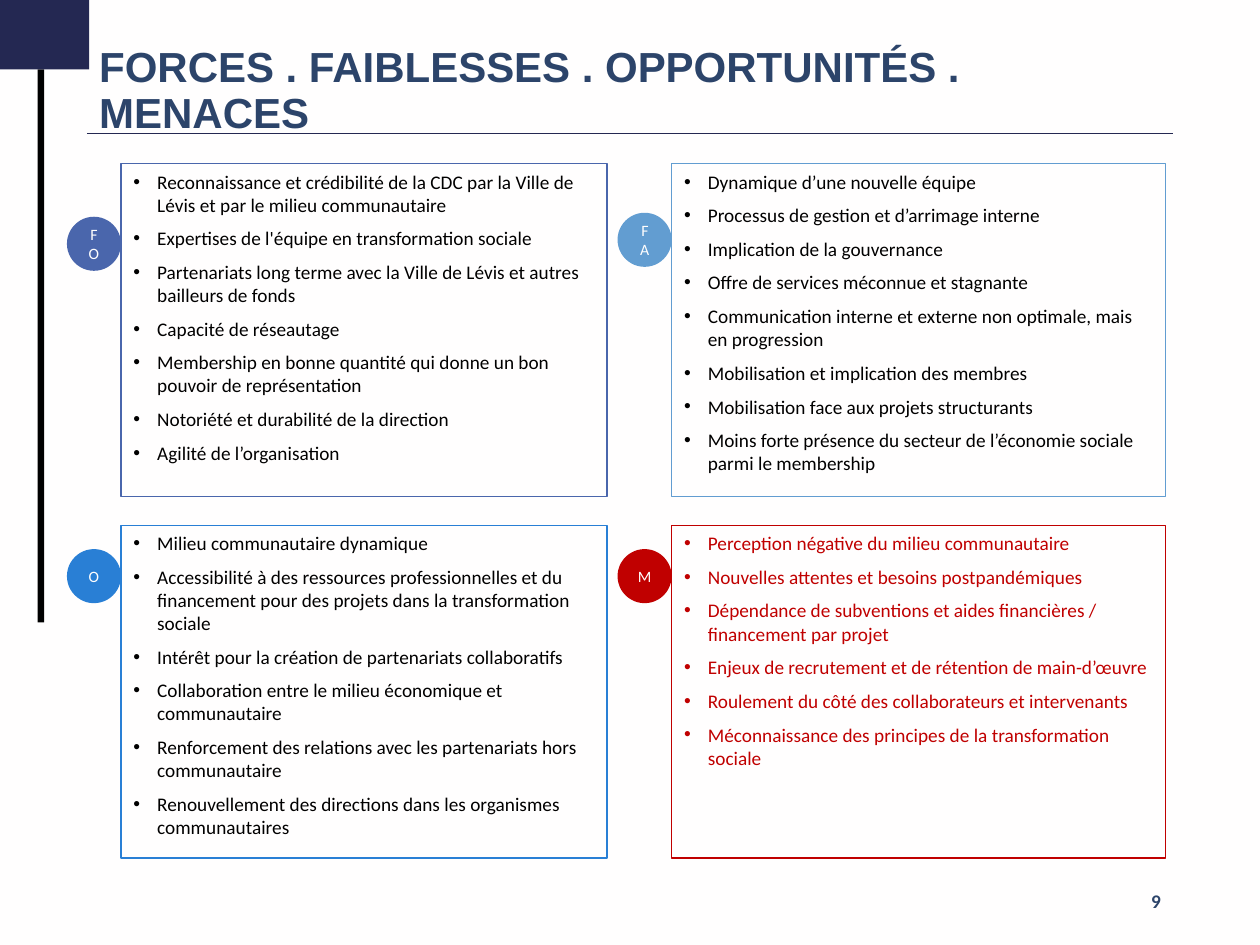
from dataclasses import dataclass

import lxml.etree
import pptx
import pptx.dml.color
import pptx.enum.shapes
import pptx.enum.text
import pptx.oxml.ns
import pptx.shapes.autoshape
import pptx.slide
import pptx.text.text
import pptx.util

Cm = pptx.util.Cm
Pt = pptx.util.Pt
RGBColor = pptx.dml.color.RGBColor
Shape = pptx.shapes.autoshape.Shape
Slide = pptx.slide.Slide
MSO_SHAPE = pptx.enum.shapes.MSO_SHAPE
MSO_ANCHOR = pptx.enum.text.MSO_ANCHOR
PP_ALIGN = pptx.enum.text.PP_ALIGN

WHITE = RGBColor(0xFF, 0xFE, 0xFE)
BLACK = RGBColor(0x00, 0x00, 0x00)
NAVY = RGBColor(0x24, 0x28, 0x52)
SLATE = RGBColor(0x2C, 0x44, 0x6A)
INDIGO = RGBColor(0x4A, 0x66, 0xAC)
SKY = RGBColor(0x62, 0x9D, 0xD1)
BLUE = RGBColor(0x29, 0x7F, 0xD5)
RED = RGBColor(0xC0, 0x00, 0x00)

LEFT_COLUMN, LEFT_WIDTH = Cm(2.44), Cm(9.8)
RIGHT_COLUMN, RIGHT_WIDTH = Cm(13.54), Cm(9.96)
TOP_ROW, BOTTOM_ROW = Cm(3.3), Cm(10.59)
PANEL_HEIGHT = Cm(6.71)
BADGE_SIZE = Cm(1.09)
BULLET_INDENT = Cm(0.48)


@dataclass(frozen=True)
class Panel:
    letters: str
    left: int
    top: int
    width: int
    badge_top: int
    color: RGBColor
    text_color: RGBColor
    items: tuple[str, ...]


PANELS = (
    Panel("FO", LEFT_COLUMN, TOP_ROW, LEFT_WIDTH, Cm(4.37), INDIGO, BLACK, (
        "Reconnaissance et crédibilité de la CDC par la Ville de Lévis et par le milieu communautaire",
        "Expertises de l'équipe en transformation sociale",
        "Partenariats long terme avec la Ville de Lévis et autres bailleurs de fonds",
        "Capacité de réseautage",
        "Membership en bonne quantité qui donne un bon pouvoir de représentation",
        "Notoriété et durabilité de la direction",
        "Agilité de l’organisation",
    )),
    Panel("FA", RIGHT_COLUMN, TOP_ROW, RIGHT_WIDTH, Cm(4.29), SKY, BLACK, (
        "Dynamique d’une nouvelle équipe",
        "Processus de gestion et d’arrimage interne",
        "Implication de la gouvernance",
        "Offre de services méconnue et stagnante",
        "Communication interne et externe non optimale, mais en progression",
        "Mobilisation et implication des membres",
        "Mobilisation face aux projets structurants",
        "Moins forte présence du secteur de l’économie sociale parmi le membership",
    )),
    Panel("O", LEFT_COLUMN, BOTTOM_ROW, LEFT_WIDTH, Cm(11.07), BLUE, BLACK, (
        "Milieu communautaire dynamique",
        "Accessibilité à des ressources professionnelles et du financement "
        "pour des projets dans la transformation sociale",
        "Intérêt pour la création de partenariats collaboratifs",
        "Collaboration entre le milieu économique et communautaire",
        "Renforcement des relations avec les partenariats hors communautaire",
        "Renouvellement des directions dans les organismes communautaires",
    )),
    Panel("M", RIGHT_COLUMN, BOTTOM_ROW, RIGHT_WIDTH, Cm(11.07), RED, RED, (
        "Perception négative du milieu communautaire",
        "Nouvelles attentes et besoins postpandémiques",
        "Dépendance de subventions et aides financières / financement par projet",
        "Enjeux de recrutement et de rétention de main-d’œuvre",
        "Roulement du côté des collaborateurs et intervenants",
        "Méconnaissance des principes de la transformation sociale",
    )),
)


def format_runs(paragraph: pptx.text.text._Paragraph, font_name: str, size: float,
                color: RGBColor, bold: bool = False) -> None:
    for run in paragraph.runs:
        run.font.name = font_name
        run.font.size = Pt(size)
        run.font.bold = bold
        run.font.color.rgb = color


def add_filled_shape(slide: Slide, kind: MSO_SHAPE, left: int, top: int,
                     width: int, height: int, color: RGBColor) -> Shape:
    shape = slide.shapes.add_shape(kind, left, top, width, height)
    shape.shadow.inherit = False
    shape.fill.solid()
    shape.fill.fore_color.rgb = color
    shape.line.fill.background()
    return shape


def add_label(slide: Slide, left: int, top: int, width: int, height: int, text: str,
              font_name: str, size: float, alignment: PP_ALIGN) -> pptx.text.text._Paragraph:
    text_frame = slide.shapes.add_textbox(left, top, width, height).text_frame
    text_frame.word_wrap = True
    text_frame.vertical_anchor = MSO_ANCHOR.MIDDLE
    text_frame.text = text
    paragraph = text_frame.paragraphs[0]
    paragraph.alignment = alignment
    format_runs(paragraph, font_name, size, SLATE, bold=True)
    return paragraph


def add_bullet(paragraph: pptx.text.text._Paragraph) -> None:
    properties = paragraph._p.get_or_add_pPr()
    properties.set("marL", str(BULLET_INDENT))
    properties.set("indent", str(-BULLET_INDENT))
    bullet_font = lxml.etree.SubElement(properties, pptx.oxml.ns.qn("a:buFont"))
    bullet_font.set("typeface", "Arial")
    bullet = lxml.etree.SubElement(properties, pptx.oxml.ns.qn("a:buChar"))
    bullet.set("char", "•")


def draw_badge(slide: Slide, panel: Panel) -> None:
    badge = add_filled_shape(slide, MSO_SHAPE.OVAL, panel.left - BADGE_SIZE,
                             panel.badge_top, BADGE_SIZE, BADGE_SIZE, panel.color)
    badge.text_frame.text = panel.letters
    badge.text_frame.vertical_anchor = MSO_ANCHOR.MIDDLE
    paragraph = badge.text_frame.paragraphs[0]
    paragraph.alignment = PP_ALIGN.CENTER
    format_runs(paragraph, "Calibri", 9, WHITE)


def draw_panel(slide: Slide, panel: Panel) -> None:
    shape = slide.shapes.add_shape(MSO_SHAPE.RECTANGLE, panel.left, panel.top,
                                   panel.width, PANEL_HEIGHT)
    shape.shadow.inherit = False
    shape.fill.background()
    shape.line.color.rgb = panel.color
    shape.line.width = Pt(0.75)
    text_frame = shape.text_frame
    text_frame.word_wrap = True
    text_frame.vertical_anchor = MSO_ANCHOR.TOP
    text_frame.text = "\n".join(panel.items)
    for index, paragraph in enumerate(text_frame.paragraphs):
        add_bullet(paragraph)
        paragraph.alignment = PP_ALIGN.LEFT
        paragraph.space_before = Pt(3 if index else 0)
        paragraph.space_after = Pt(3)
        format_runs(paragraph, "Calibri", 11, panel.text_color)


def draw_frame(slide: Slide) -> None:
    add_filled_shape(slide, MSO_SHAPE.RECTANGLE, Cm(0.76), Cm(1.4), Cm(0.13), Cm(11.15), BLACK)
    add_filled_shape(slide, MSO_SHAPE.RECTANGLE, Cm(-0.05), Cm(0), Cm(1.85), Cm(1.4), NAVY)
    rule = slide.shapes.add_connector(pptx.enum.shapes.MSO_CONNECTOR.STRAIGHT,
                                      Cm(1.75), Cm(2.69), Cm(23.65), Cm(2.69))
    rule.line.color.rgb = NAVY
    rule.line.width = Pt(1)
    lxml.etree.SubElement(rule._element.spPr, pptx.oxml.ns.qn("a:effectLst"))


def main() -> None:
    presentation = pptx.Presentation()
    presentation.slide_width = Cm(25.4)
    presentation.slide_height = Cm(19.05)
    slide = presentation.slides.add_slide(presentation.slide_layouts[6])
    slide.background.fill.solid()
    slide.background.fill.fore_color.rgb = WHITE
    draw_frame(slide)
    for panel in PANELS:
        draw_badge(slide, panel)
    add_label(slide, Cm(17.93), Cm(17.65), Cm(5.72), Cm(1.02), "9",
              "Calibri", 11, PP_ALIGN.RIGHT)
    title = add_label(slide, Cm(1.75), Cm(1.02), Cm(21.9), Cm(1.67),
                      "FORCES . FAIBLESSES . OPPORTUNITÉS . MENACES",
                      "Arial", 24, PP_ALIGN.LEFT)
    title.line_spacing = 0.9
    for panel in PANELS:
        draw_panel(slide, panel)
    presentation.save("out.pptx")


if __name__ == "__main__":
    main()
